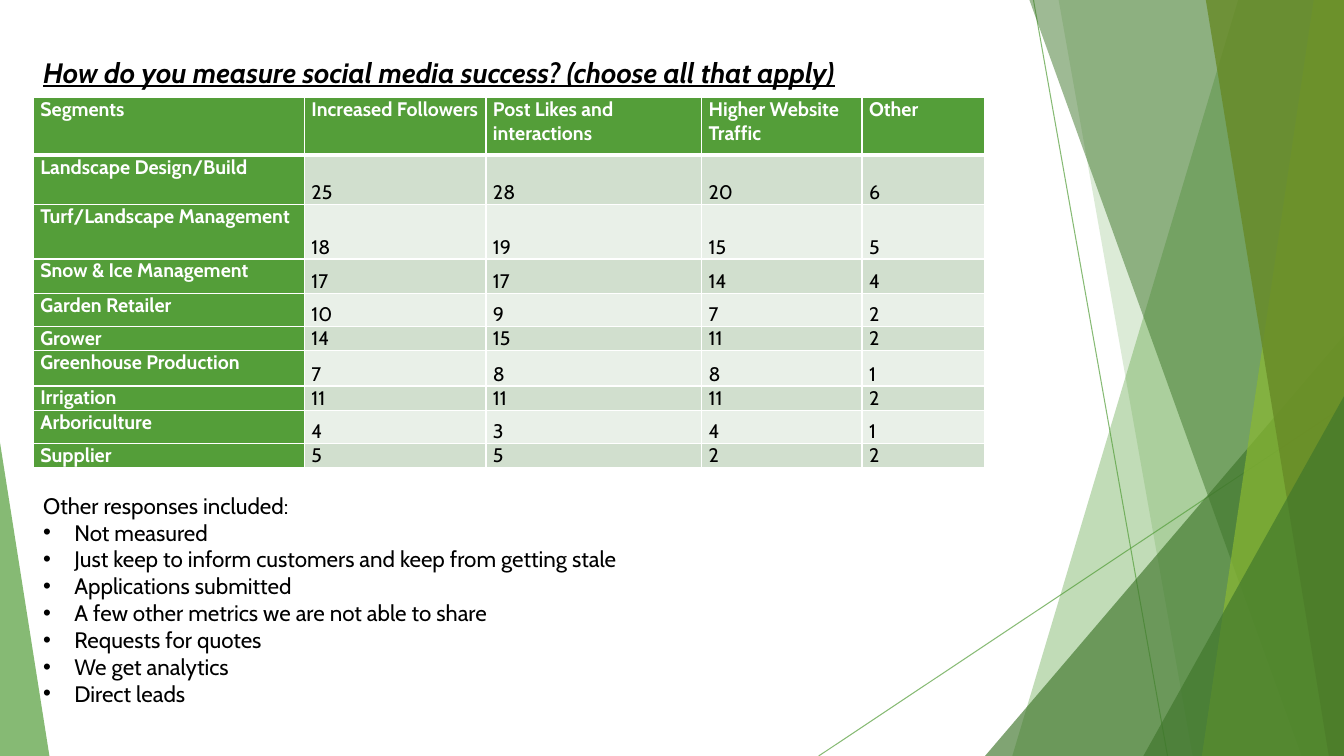
from lxml import etree
from pptx import Presentation
from pptx import util as u
from pptx.dml import color
from pptx.enum import shapes, text
from pptx.oxml import ns

GREEN, DARK, LIME, OLIVE = "549E39", "3F762B", "8AB833", "678A26"
WHITE, BLACK = "FFFFFF", "000000"
BANDS = ("D1DFCE", "E9F0E8")
COLUMN_WIDTHS = (2.69, 1.8, 2.14, 1.59, 1.22)
ROW_HEIGHTS = (0.57, 0.49, 0.54, 0.34, 0.33, 0.24, 0.35, 0.24, 0.33, 0.24)
RESULTS = (
    ("Segments", "Increased Followers", "Post Likes and interactions", "Higher Website Traffic", "Other"),
    ("Landscape Design/Build", 25, 28, 20, 6),
    ("Turf/Landscape Management", 18, 19, 15, 5),
    ("Snow & Ice Management", 17, 17, 14, 4),
    ("Garden Retailer", 10, 9, 7, 2),
    ("Grower", 14, 15, 11, 2),
    ("Greenhouse Production", 7, 8, 8, 1),
    ("Irrigation", 11, 11, 11, 2),
    ("Arboriculture", 4, 3, 4, 1),
    ("Supplier", 5, 5, 2, 2),
)
RESPONSES = (
    "Not measured",
    "Just keep to inform customers and keep from getting stale",
    "Applications submitted",
    "A few other metrics we are not able to share",
    "Requests for quotes",
    "We get analytics",
    "Direct leads",
)


def rgb(code):
    """Turn a hex string into a colour."""
    return color.RGBColor.from_string(code)


def add_xml(parent, tag, **attributes):
    """Append a DrawingML element and return it."""
    return etree.SubElement(parent, ns.qn(tag), attributes)


def set_opacity(fill_owner, percent):
    """Make the solid colour inside an element partly transparent."""
    tint = next(fill_owner.iter(ns.qn("a:srgbClr")))
    add_xml(tint, "a:alpha", val=str(percent * 1000))


def write(paragraph, words, size=14, tone=BLACK, bold=False, italic=False, underline=False):
    """Write one formatted run into a paragraph."""
    run = paragraph.add_run()
    run.text = str(words)
    font = run.font
    font.name, font.size, font.color.rgb = "Cabin", u.Pt(size), rgb(tone)
    font.bold, font.italic, font.underline = bold, italic, underline


def paint(facet, tone, opacity):
    """Give a facet a flat translucent fill and no outline."""
    facet.shadow.inherit = False
    facet.line.fill.background()
    facet.fill.solid()
    facet.fill.fore_color.rgb = rgb(tone)
    set_opacity(facet.fill._xPr, opacity)


def add_ray(slide, start, end):
    """Draw a thin translucent green line."""
    ray = slide.shapes.add_connector(
        shapes.MSO_CONNECTOR.STRAIGHT, *(u.Inches(value) for value in start + end))
    ray.line.width = u.Pt(0.75)
    ray.line.color.rgb = rgb(GREEN)
    set_opacity(ray.line._ln, 70)
    add_xml(ray._element.spPr, "a:effectLst")


def add_band(slide, box, top_inset, bottom_inset, tone, opacity):
    """Draw a slanted band that fills the box to its right edge."""
    left, top, width, height = box
    right, bottom = left + width, top + height
    corners = ((right, top), (right, bottom), (left + bottom_inset, bottom))
    outline = slide.shapes.build_freeform(u.Inches(left + top_inset), u.Inches(top))
    outline.add_line_segments([(u.Inches(x), u.Inches(y)) for x, y in corners], close=True)
    paint(outline.convert_to_shape(), tone, opacity)


def add_corner(slide, box, apex, tone, opacity):
    """Draw a right triangle in the box, with its apex at the left (0) or right (1)."""
    corner = slide.shapes.add_shape(
        shapes.MSO_SHAPE.ISOSCELES_TRIANGLE, *(u.Inches(value) for value in box))
    corner.adjustments[0] = apex
    paint(corner, tone, opacity)


def add_facets(slide, box):
    """Build the layered green facets at the right of the slide."""
    left, top, width, height = box
    right, bottom = left + width, top + height

    def band(*details):
        add_band(slide, box, *details)

    def corner(wide, high):
        add_corner(slide, (right - wide, bottom - high, wide, high), 1, DARK, 66)

    add_ray(slide, (left + 2.13, top), (left + 3.46, bottom))
    add_ray(slide, (right, top + 4.03), (left, bottom))
    band(4.16, 1.92, GREEN, 36)
    band(2.38, 3.71, GREEN, 20)
    corner(3.56, 4.17)
    band(2.09, 4.79, DARK, 50)
    band(4.91, 3.8, LIME, 70)
    band(3.84, 5.06, OLIVE, 80)
    corner(1.99, 3.57)


def add_cell_borders(cell, bottom_width):
    """Rule a cell in white on all four sides."""
    properties = cell._tc.get_or_add_tcPr()
    for tag, points in (("a:lnL", 1), ("a:lnR", 1), ("a:lnT", 1), ("a:lnB", bottom_width)):
        rule = add_xml(properties, tag, w=str(u.Pt(points)))
        add_xml(add_xml(rule, "a:solidFill"), "a:srgbClr", val=WHITE)


def add_results(slide, box):
    """Build the table of answers by segment."""
    frame = slide.shapes.add_table(
        len(RESULTS), len(COLUMN_WIDTHS), *(u.Inches(value) for value in box))
    table = frame.table
    table.first_row = table.horz_banding = False
    for column, width in zip(table.columns, COLUMN_WIDTHS):
        column.width = u.Inches(width)
    for row, height in zip(table.rows, ROW_HEIGHTS):
        row.height = u.Inches(height)
    for row_number, answers in enumerate(RESULTS):
        for column_number, answer in enumerate(answers):
            heading = row_number == 0 or column_number == 0
            cell = table.cell(row_number, column_number)
            cell.margin_left = cell.margin_right = u.Inches(0.07)
            cell.margin_top = cell.margin_bottom = 0
            cell.vertical_anchor = text.MSO_ANCHOR.TOP if heading else text.MSO_ANCHOR.BOTTOM
            add_cell_borders(cell, 3 if row_number == 0 else 1)
            cell.fill.solid()
            cell.fill.fore_color.rgb = rgb(GREEN if heading else BANDS[(row_number - 1) % 2])
            write(cell.text_frame.paragraphs[0], answer,
                  tone=WHITE if heading else BLACK, bold=heading)


def add_text_frame(slide, box, wrap):
    """Add a text box that grows with its words and return its frame."""
    frame = slide.shapes.add_textbox(*(u.Inches(value) for value in box)).text_frame
    frame.word_wrap = wrap
    frame.auto_size = text.MSO_AUTO_SIZE.SHAPE_TO_FIT_TEXT
    return frame


def add_question(slide, box):
    """Build the survey question above the table."""
    frame = add_text_frame(slide, box, False)
    write(frame.paragraphs[0], "How do you measure social media success? (choose all that apply)",
          size=20, bold=True, italic=True, underline=True)


def add_responses(slide, box):
    """Build the bulleted list of other responses."""
    frame = add_text_frame(slide, box, True)
    write(frame.paragraphs[0], "Other responses included:", size=16)
    indent = u.Inches(0.31)
    for response in RESPONSES:
        paragraph = frame.add_paragraph()
        properties = paragraph._p.get_or_add_pPr()
        properties.set("marL", str(indent))
        properties.set("indent", str(-indent))
        add_xml(properties, "a:buFont", typeface="Arial")
        add_xml(properties, "a:buChar", char="•")
        write(paragraph, response, size=16)


def main():
    """Build and save the slide."""
    deck = Presentation()
    deck.slide_width, deck.slide_height = u.Inches(13.33), u.Inches(7.5)
    slide = deck.slides.add_slide(deck.slide_layouts[6])
    add_facets(slide, (8.12, 0, 5.21, 7.5))
    add_corner(slide, (0, 4.39, 0.49, 3.11), 0, GREEN, 70)
    add_results(slide, (0.33, 0.97, 9.44, 3.69))
    add_question(slide, (0.33, 0.5, 8.97, 0.44))
    add_responses(slide, (0.33, 4.83, 9.27, 2.56))
    deck.save("out.pptx")


if __name__ == "__main__":
    main()
